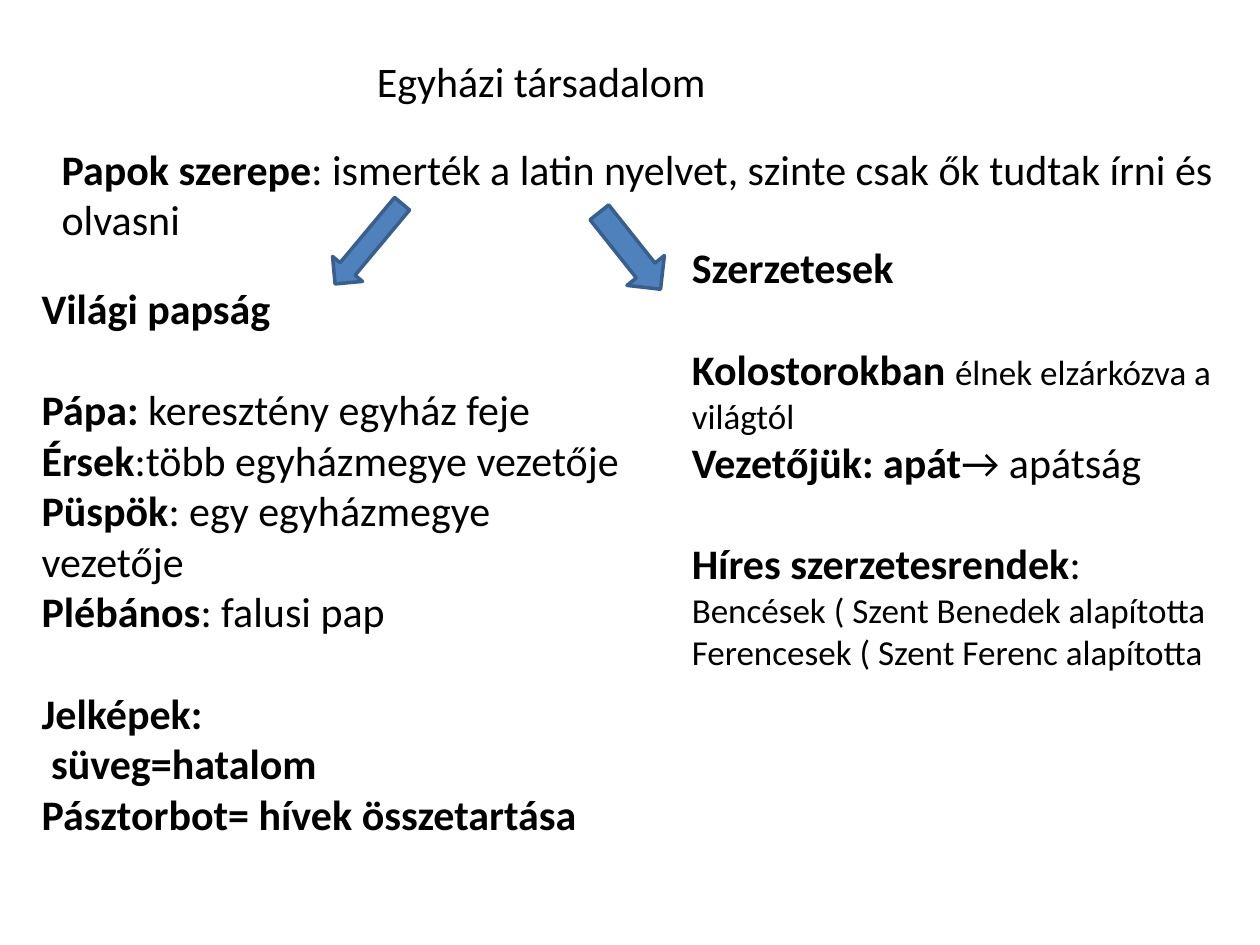
from dataclasses import dataclass

from pptx import Presentation
from pptx.dml.color import RGBColor
from pptx.enum.shapes import MSO_SHAPE
from pptx.enum.text import MSO_ANCHOR, MSO_AUTO_SIZE, PP_ALIGN
from pptx.oxml.ns import qn
from pptx.util import Inches, Pt

RIGHT_ARROW, DOWN_ARROW = MSO_SHAPE.RIGHT_ARROW, MSO_SHAPE.DOWN_ARROW
TOP, LEFT, NO_FIT = MSO_ANCHOR.TOP, PP_ALIGN.LEFT, MSO_AUTO_SIZE.NONE
TWO_CONTENT = 3


@dataclass(frozen=True)
class Theme:
    font: str = "Calibri"
    text: RGBColor = RGBColor(0, 0, 0)
    arrow: RGBColor = RGBColor(0x4F, 0x81, 0xBD)
    outline: RGBColor = RGBColor(0x3A, 0x5F, 0x8C)
    size: Pt = Pt(24)
    small: Pt = Pt(20)
    gap: Pt = Pt(29.3)
    line: Pt = Pt(2)


class SlideBuilder:
    """Draws styled elements on the current slide."""

    def __init__(self, slide, theme):
        self.s, self.theme = slide, theme

    def place(self, sp, box):
        for name, value in zip(("left", "top", "width", "height"), box):
            setattr(sp, name, Inches(value))

    def fill_text(self, sp, paragraphs):
        t = self.theme
        tf = sp.text_frame
        for name, value in {"word_wrap": True, "auto_size": NO_FIT, "vertical_anchor": TOP}.items():
            setattr(tf, name, value)
        for i, (gap, runs) in enumerate(paragraphs):
            p = tf.add_paragraph() if i else tf.paragraphs[0]
            pPr = p._p.get_or_add_pPr()
            pPr.set("marL", "0")
            pPr.set("indent", "0")
            pPr.append(pPr.makeelement(qn("a:buNone"), {}))
            fmt = {"alignment": LEFT, "space_before": t.gap if gap else Pt(0)}
            for name, value in fmt.items():
                setattr(p, name, value)
            for text, bold, size in runs:
                r = p.add_run()
                r.text = text
                font = {"name": t.font, "size": size, "bold": bold}
                for name, value in font.items():
                    setattr(r.font, name, value)
                r.font.color.rgb = t.text

    def title(self, box, paragraphs):
        sp = self.s.shapes.title
        self.place(sp, box)
        self.fill_text(sp, paragraphs)

    def body(self, idx, box, paragraphs):
        sp = self.s.placeholders[idx]
        self.place(sp, box)
        self.fill_text(sp, paragraphs)

    def text(self, box, paragraphs):
        self.fill_text(self.s.shapes.add_textbox(*map(Inches, box)), paragraphs)

    def arrow(self, kind, box, rotation):
        sp = self.s.shapes.add_shape(kind, *map(Inches, box))
        sp.rotation = rotation
        sp.shadow.inherit = False
        sp.fill.solid()
        sp.fill.fore_color.rgb = self.theme.arrow
        sp.line.color.rgb = self.theme.outline
        sp.line.width = self.theme.line


def main():
    prs = Presentation()
    prs.slide_width, prs.slide_height = Inches(10), Inches(7.5)
    theme = Theme()
    b = SlideBuilder(prs.slides.add_slide(prs.slide_layouts[TWO_CONTENT]), theme)

    def bold(text):
        return text, True, theme.size

    def plain(text):
        return text, False, theme.size

    def small(text):
        return text, False, theme.small

    b.title((2.89, 0.39, 4.53, 0.5), [(False, [plain("Egyházi társadalom")])])
    b.body(1, (0.23, 2.19, 4.92, 5.31), [
        (False, [bold("Világi papság")]),
        (True, [bold("Pápa: "), plain("keresztény egyház feje")]),
        (False, [bold("Érsek"), plain(":több egyházmegye vezetője")]),
        (False, [bold("Püspök"), plain(": egy egyházmegye vezetője")]),
        (False, [bold("Plébános"), plain(": falusi pap")]),
        (True, [bold("Jelképek:")]),
        (False, [bold(" süveg=hatalom")]),
        (False, [bold("Pásztorbot= hívek összetartása")]),
    ])
    b.text((0.39, 1.09, 9.45, 0.91), [
        (False, [bold("Papok szerepe"),
                 plain(": ismerték a latin nyelvet, szinte csak ők tudtak írni és olvasni")]),
    ])
    b.body(2, (5.39, 1.87, 4.61, 3.87), [
        (False, [bold("Szerzetesek")]),
        (True, [bold("Kolostorokban "), small("élnek elzárkózva a világtól")]),
        (False, [bold("Vezetőjük: apát"), plain("→ apátság")]),
        (True, [bold("Híres szerzetesrendek"), plain(":")]),
        (False, [small("Bencések ( Szent Benedek alapította")]),
        (False, [small("Ferencesek ( Szent Ferenc alapította")]),
    ])
    b.arrow(RIGHT_ARROW, (2.51, 1.78, 0.83, 0.31), 129.9)
    b.arrow(DOWN_ARROW, (4.81, 1.6, 0.38, 0.78), 321.5)
    prs.save("out.pptx")


if __name__ == "__main__":
    main()
